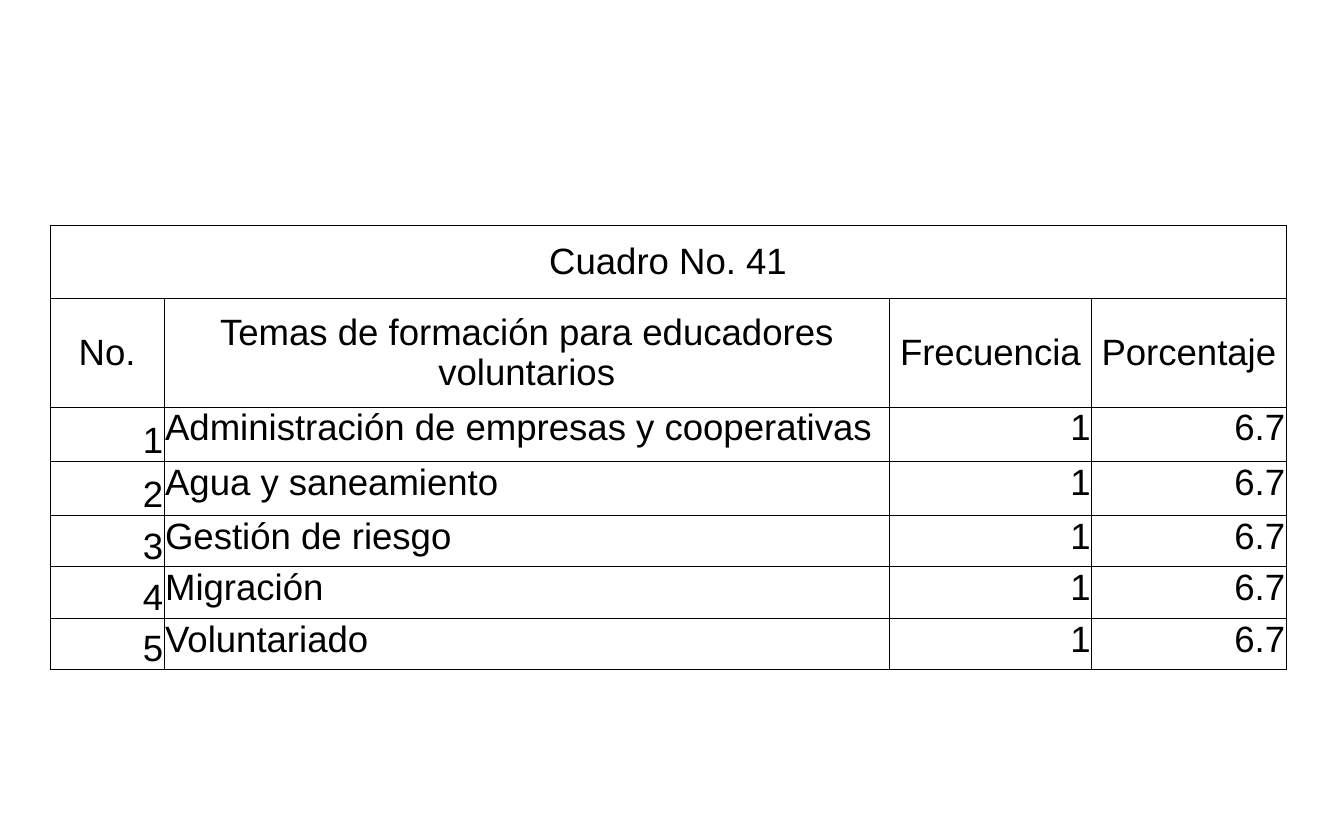
"""Build the slide with the table of training topics for volunteer educators."""
import dataclasses

import lxml.etree
import pptx
import pptx.dml.color
import pptx.enum.text
import pptx.oxml.ns
import pptx.util

Pt = pptx.util.Pt
ALIGN = pptx.enum.text.PP_ALIGN
ANCHOR = pptx.enum.text.MSO_ANCHOR


@dataclasses.dataclass(frozen=True)
class Theme:
    font: str = "Arial"
    size: float = 28
    ink: str = "000000"
    border: float = 0.5
    inset: float = 0.72


class SlideBuilder:
    def __init__(self, presentation, theme):
        self.theme = theme
        self.slide = presentation.slides.add_slide(presentation.slide_layouts[6])

    def table(self, left, top, widths, heights):
        frame = self.slide.shapes.add_table(
            len(heights), len(widths), Pt(left), Pt(top), Pt(sum(widths)), Pt(sum(heights)))
        table = frame.table
        table.first_row = table.horz_banding = False
        for column, width in zip(table.columns, widths):
            column.width = Pt(width)
        for row, height in zip(table.rows, heights):
            row.height = Pt(height)
        for cell in table.iter_cells():
            self.borders(cell)
            cell.fill.background()
        return table

    def borders(self, cell):
        qn = pptx.oxml.ns.qn
        properties = cell._tc.get_or_add_tcPr()
        for side in ("L", "R", "T", "B"):
            line = lxml.etree.SubElement(
                properties, qn(f"a:ln{side}"), w=str(Pt(self.theme.border)))
            fill = lxml.etree.SubElement(line, qn("a:solidFill"))
            lxml.etree.SubElement(fill, qn("a:srgbClr"), val=self.theme.ink)

    def cell_text(self, cell, text, align, anchor):
        cell.margin_left = cell.margin_right = cell.margin_top = Pt(self.theme.inset)
        cell.margin_bottom = Pt(0)
        cell.vertical_anchor = anchor
        paragraph = cell.text_frame.paragraphs[0]
        paragraph.alignment = align
        run = paragraph.add_run()
        run.text = text
        run.font.name = self.theme.font
        run.font.size = Pt(self.theme.size)
        run.font.color.rgb = pptx.dml.color.RGBColor.from_string(self.theme.ink)


TITLE = "Cuadro No. 41"
HEADERS = ("No.", "Temas de formación para educadores voluntarios", "Frecuencia", "Porcentaje")
TOPICS = (
    ("Administración de empresas y cooperativas", "1", "6.7"),
    ("Agua y saneamiento", "1", "6.7"),
    ("Gestión de riesgo", "1", "6.7"),
    ("Migración", "1", "6.7"),
    ("Voluntariado", "1", "6.7"),
)
COLUMN_WIDTHS = (87.5, 555, 155, 148.8)
ROW_HEIGHTS = (55.3, 83.4, 41.6, 41.6, 39.3, 39.3, 39.3)
COLUMN_STYLES = (
    (ALIGN.RIGHT, ANCHOR.BOTTOM),
    (ALIGN.LEFT, ANCHOR.TOP),
    (ALIGN.RIGHT, ANCHOR.TOP),
    (ALIGN.RIGHT, ANCHOR.TOP),
)


def main():
    presentation = pptx.Presentation()
    presentation.slide_width = Pt(1028.88)
    presentation.slide_height = Pt(640.8)
    builder = SlideBuilder(presentation, Theme())
    table = builder.table(38.2, 172.8, COLUMN_WIDTHS, ROW_HEIGHTS)

    table.cell(0, 0).merge(table.cell(0, len(HEADERS) - 1))
    builder.cell_text(table.cell(0, 0), TITLE, ALIGN.CENTER, ANCHOR.MIDDLE)
    for column, header in enumerate(HEADERS):
        builder.cell_text(table.cell(1, column), header, ALIGN.CENTER, ANCHOR.MIDDLE)
    for number, topic in enumerate(TOPICS, start=1):
        for column, text in enumerate((str(number), *topic)):
            builder.cell_text(table.cell(number + 1, column), text, *COLUMN_STYLES[column])
    presentation.save("out.pptx")


if __name__ == "__main__":
    main()
